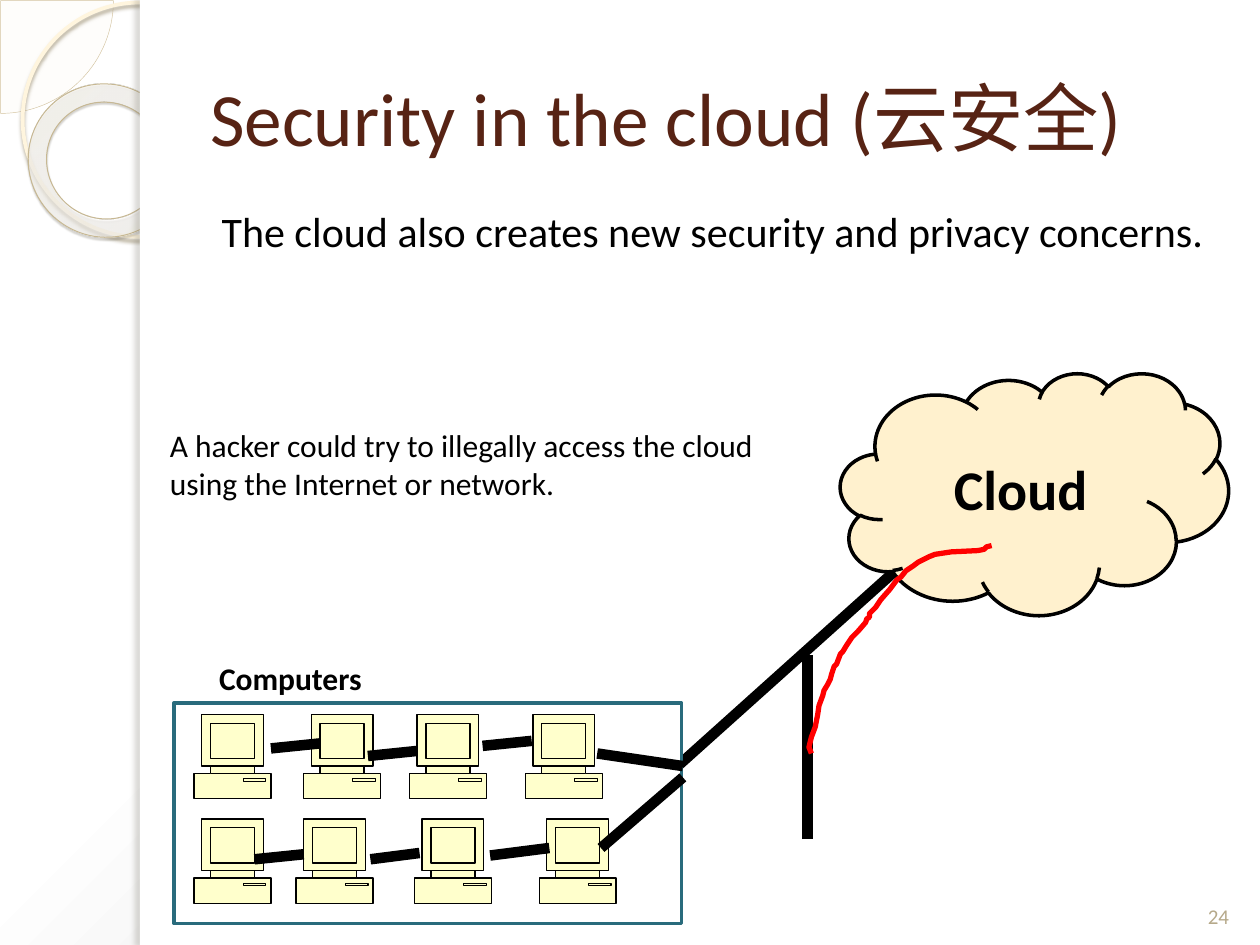
from lxml import etree
from pptx import Presentation
from pptx.dml.color import RGBColor
from pptx.enum.shapes import MSO_CONNECTOR, MSO_SHAPE as Preset
from pptx.enum.text import MSO_ANCHOR as Anchor, PP_ALIGN as Align
from pptx.oxml.ns import qn
from pptx.util import Inches, Pt

BLACK = RGBColor(0x00, 0x00, 0x00)
WHITE = RGBColor(0xFF, 0xFF, 0xFF)
RED = RGBColor(0xFF, 0x00, 0x00)
BROWN = RGBColor(0x57, 0x23, 0x14)
TAN = RGBColor(0xB6, 0xA9, 0x8A)
TEAL = RGBColor(0x29, 0x6B, 0x7C)
CREAM = RGBColor(0xFF, 0xF1, 0xCE)
PALE_YELLOW = RGBColor(0xFF, 0xFF, 0xCC)
PIE_FILL = RGBColor(0xFE, 0xFA, 0xF4)
PIE_LINE = RGBColor(0xD3, 0xC3, 0x9F)
RING_LINE = RGBColor(0xFF, 0xF5, 0xDE)
DONUT_LINE = RGBColor(0xC7, 0xB8, 0x93)

# Contours of one computer, relative to its top left corner
COMPUTER = [
    [(0.48, 0.47), (0.48, 0.41), (0.55, 0.41), (0.55, 0), (0.06, 0), (0.06, 0.41),
     (0.13, 0.41), (0.13, 0.47), (0, 0.47), (0, 0.67), (0.61, 0.67), (0.61, 0.47)],
    [(0.13, 0.47), (0.13, 0.41), (0.48, 0.41), (0.48, 0.47)],
    [(0.13, 0.35), (0.13, 0.07), (0.48, 0.07), (0.48, 0.35)],
    [(0.39, 0.53), (0.39, 0.51), (0.57, 0.51), (0.57, 0.53)],
]
COMPUTER_ROWS = {5.67: (2.41, 3.25, 4.17, 1.54), 6.5: (1.54, 2.35, 3.29, 4.28)}
CABLES = [
    (3.83, 5.92, 4.22, 5.88), (2.92, 6, 3.31, 5.96), (2.15, 5.94, 2.54, 5.9),
    (2.02, 6.82, 2.41, 6.78), (2.94, 6.82, 3.33, 6.77), (3.89, 6.79, 4.36, 6.73),
    (4.77, 6.73, 5.42, 6.17), (4.74, 5.98, 5.42, 6.08),
]
ATTACK_TRAIL = [
    (6.44, 5.98), (6.42, 5.93), (6.44, 5.85), (6.47, 5.77), (6.49, 5.67), (6.5, 5.6),
    (6.53, 5.52), (6.54, 5.48), (6.57, 5.43), (6.59, 5.39), (6.6, 5.35), (6.62, 5.29),
    (6.64, 5.27), (6.67, 5.19), (6.69, 5.17), (6.72, 5.12), (6.76, 5.06), (6.81, 5.01),
    (6.87, 4.94), (6.88, 4.91), (6.9, 4.9), (6.9, 4.87), (6.95, 4.82), (6.99, 4.76),
    (7.06, 4.68), (7.12, 4.6), (7.15, 4.58), (7.19, 4.53), (7.25, 4.49), (7.29, 4.46),
    (7.37, 4.42), (7.42, 4.4), (7.55, 4.38), (7.76, 4.37), (7.81, 4.36), (7.83, 4.34),
    (7.87, 4.33),
]


def add_color(parent, color, opacity=100):
    node = etree.SubElement(parent, qn("a:srgbClr"), val=str(color))
    if opacity < 100:
        etree.SubElement(node, qn("a:alpha"), val=str(opacity * 1000))


def make_radial(owner, stops, focus):
    """Turn the gradient fill inside owner into a circular one."""
    gradient = next(owner.iter(qn("a:gradFill")))
    for child in list(gradient):
        gradient.remove(child)
    stop_list = etree.SubElement(gradient, qn("a:gsLst"))
    for position, color, opacity in stops:
        stop = etree.SubElement(stop_list, qn("a:gs"), pos=str(position * 1000))
        add_color(stop, color, opacity)
    circle = etree.SubElement(gradient, qn("a:path"), {"path": "circle"})
    sides = {side: str(value * 1000) for side, value in zip("ltrb", focus)}
    etree.SubElement(circle, qn("a:fillToRect"), sides)


class SlideBuilder:
    font = "Calibri"

    def __init__(self, slide):
        self.slide = slide

    def paint(self, shape, fill=None, line=None, width=1, opacity=100):
        shape.shadow.inherit = False
        if fill is None:
            shape.fill.background()
        else:
            shape.fill.solid()
            shape.fill.fore_color.rgb = fill
            if opacity < 100:
                color = next(shape._element.spPr.iter(qn("a:srgbClr")))
                etree.SubElement(color, qn("a:alpha"), val=str(opacity * 1000))
        if line is None:
            shape.line.fill.background()
        else:
            shape.line.color.rgb = line
            shape.line.width = Pt(width)
        return shape

    def shape(self, preset, box, adjustments=(), **style):
        shape = self.slide.shapes.add_shape(preset, *map(Inches, box))
        for index, value in enumerate(adjustments):
            shape.adjustments[index] = value
        return self.paint(shape, **style)

    def shadow(self, shape, color, opacity, blur, distance, angle):
        effects = shape._element.spPr.find(qn("a:effectLst"))
        outer = etree.SubElement(effects, qn("a:outerShdw"), blurRad=str(int(Pt(blur))),
                                 dist=str(int(Pt(distance))), dir=str(angle * 60000),
                                 algn="tl", rotWithShape="0")
        add_color(outer, color, opacity)

    def label(self, shape, text, size, color=BLACK, bold=False,
              align=Align.LEFT, anchor=Anchor.TOP):
        frame = shape.text_frame
        frame.text = text
        frame.word_wrap = True
        frame.vertical_anchor = anchor
        paragraph = frame.paragraphs[0]
        paragraph.alignment = align
        font = paragraph.runs[0].font
        font.name, font.size, font.bold = self.font, Pt(size), bold
        font.color.rgb = color
        return paragraph

    def text(self, box, text, size, **style):
        shape = self.slide.shapes.add_textbox(*map(Inches, box))
        return self.label(shape, text, size, **style)

    def line(self, ends, color=BLACK, width=6):
        connector = self.slide.shapes.add_connector(
            MSO_CONNECTOR.STRAIGHT, *map(Inches, ends))
        connector.line.color.rgb = color
        connector.line.width = Pt(width)
        etree.SubElement(connector._element.spPr, qn("a:effectLst"))

    def freeform(self, contours, left=0, top=0, close=True, **style):
        contours = [[(Inches(left + x), Inches(top + y)) for x, y in contour]
                    for contour in contours]
        builder = self.slide.shapes.build_freeform(*contours[0][0])
        for index, contour in enumerate(contours):
            if index:
                builder.move_to(*contour[0])
            builder.add_line_segments(contour[1:], close=close)
        shape = self.paint(builder.convert_to_shape(), **style)
        # Each contour gets its own path, so that inner ones are not holes
        outline = next(shape._element.iter(qn("a:path")))
        path_list = outline.getparent()
        current = outline
        for index, step in enumerate(list(outline)):
            if index and step.tag == qn("a:moveTo"):
                current = etree.SubElement(path_list, qn("a:path"), dict(outline.attrib))
            if current is not outline:
                current.append(step)
        return shape


def main():
    presentation = Presentation()
    presentation.slide_width, presentation.slide_height = Inches(10), Inches(7.5)
    slide = presentation.slides.add_slide(presentation.slide_layouts[6])
    builder = SlideBuilder(slide)

    # Background and side decoration
    slide.background.fill.gradient()
    make_radial(slide._element, [(0, WHITE, 100), (40, WHITE, 100), (100, "C5C5C5", 100)],
                (-24, -20, 124, 120))
    builder.shape(Preset.PIE, (-0.89, -0.89, 1.79, 1.79), (0, 54),
                  fill=PIE_FILL, opacity=33, line=PIE_LINE, width=0.25)
    ring = builder.shape(Preset.OVAL, (0.18, 0.02, 1.86, 1.86), line=RING_LINE, width=2.15)
    builder.shadow(ring, "B0A68F", 85, 2, 2, 90)
    donut = builder.shape(Preset.DONUT, (0.22, 0.67, 1.23, 1.21), (0.12,),
                          line=DONUT_LINE, width=0.58)
    donut.rotation = 38.6
    donut.fill.gradient()
    make_radial(donut._element, [(0, "FFFCF6", 70), (70, "FFFEFB", 55), (100, "F0D28E", 60)],
                (-408, -50, 508, 150))
    builder.shadow(donut, "5A5444", 35, 1, 1.2, 75)
    builder.shape(Preset.RECTANGLE, (1.11, 0, 8.89, 7.5), fill=WHITE)
    edge = builder.shape(Preset.RECTANGLE, (1.11, 0, 0.08, 7.5), fill=WHITE)
    builder.shadow(edge, "736F63", 25, 3, 3, 180)

    # Title, statement and slide number
    builder.text((1.57, 0.3, 8.2, 1.25), "Security in the cloud (云安全)", 43,
                 color=BROWN, anchor=Anchor.MIDDLE)
    statement = builder.text((1.57, 1.58, 8.2, 5.25),
                             "The cloud also creates new security and privacy concerns.", 24)
    statement.space_before = Pt(6)
    statement._p.get_or_add_pPr().set("marL", str(int(Inches(0.09))))
    builder.text((9.42, 6.9, 0.5, 0.52), "24", 12, color=TAN,
                 align=Align.CENTER, anchor=Anchor.BOTTOM)

    # Cloud and its link to the network
    builder.line((5, 6.42, 7.83, 3.88))
    cloud = builder.shape(Preset.CLOUD, (6.67, 2.96, 3.08, 1.92),
                          fill=CREAM, line=BLACK, width=2)
    builder.label(cloud, "Cloud", 32, bold=True, align=Align.CENTER, anchor=Anchor.MIDDLE)

    # Computers and cables
    builder.shape(Preset.RECTANGLE, (1.38, 5.58, 4.03, 1.75), fill=WHITE, line=TEAL, width=2)
    for top, lefts in COMPUTER_ROWS.items():
        for left in lefts:
            builder.freeform(COMPUTER, left, top, fill=PALE_YELLOW, line=BLACK, width=0.75)
    builder.text((1.64, 5.18, 4, 0.4), "Computers", 18, bold=True)
    for cable in CABLES:
        builder.line(cable)

    # Hacker's way in
    builder.text((1.25, 3.33, 5, 0.71), "A hacker could try to illegally access the cloud "
                 "using the Internet or network.", 18)
    builder.line((6.41, 6.66, 6.41, 5.2))
    builder.freeform([ATTACK_TRAIL], close=False, line=RED, width=3)

    presentation.save("out.pptx")


if __name__ == "__main__":
    main()
